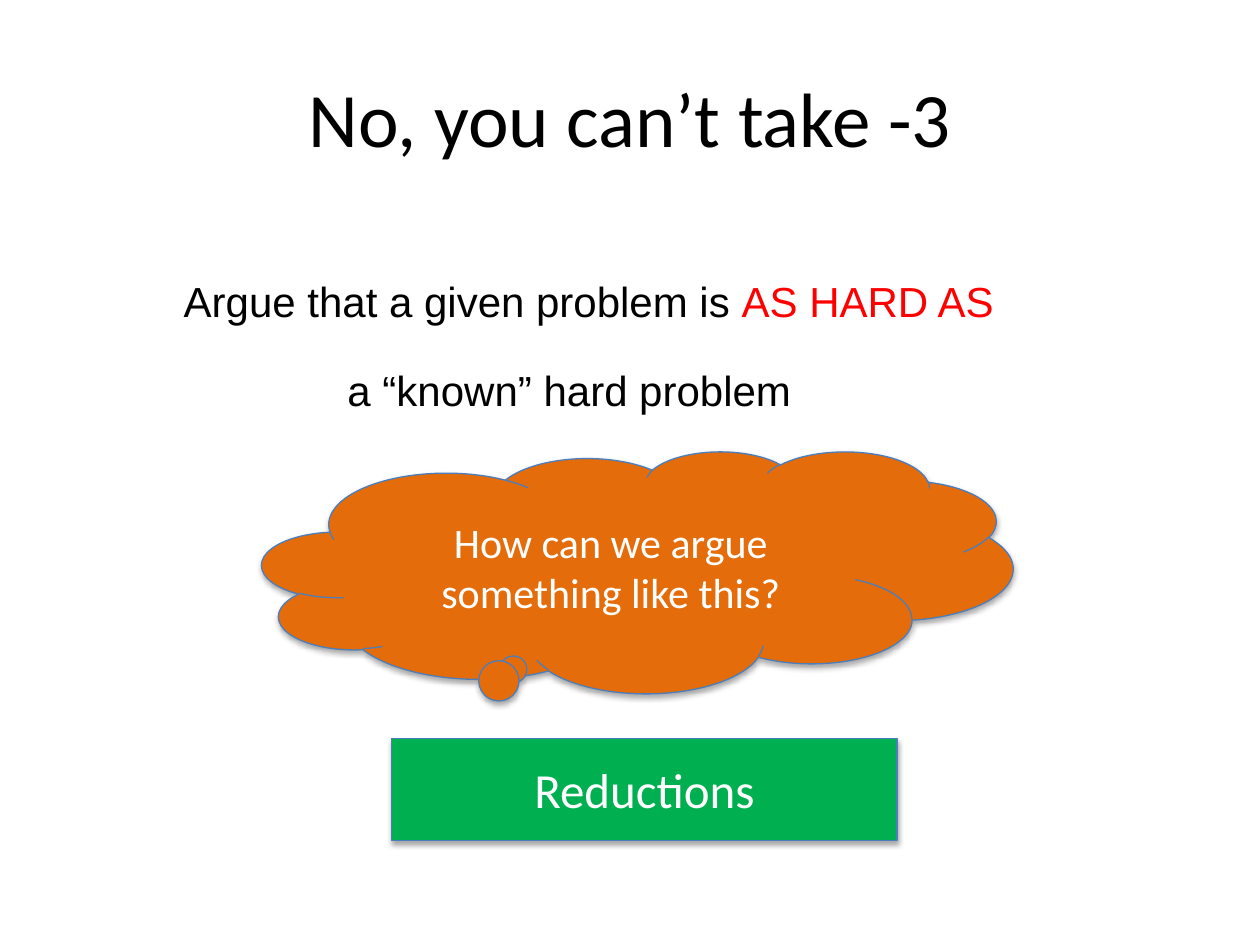
"""Build the slide that introduces reductions between hard problems."""
from dataclasses import dataclass

from pptx import Presentation
from pptx.dml.color import RGBColor
from pptx.enum.shapes import MSO_SHAPE
from pptx.enum.text import MSO_ANCHOR, MSO_AUTO_SIZE, PP_ALIGN
from pptx.util import Inches, Pt

CLOUD = MSO_SHAPE.CLOUD_CALLOUT
RECTANGLE = MSO_SHAPE.RECTANGLE
MIDDLE = MSO_ANCHOR.MIDDLE
GROW = MSO_AUTO_SIZE.SHAPE_TO_FIT_TEXT
CENTER = PP_ALIGN.CENTER
TITLE_ONLY = 5


@dataclass(frozen=True)
class Theme:
    black: RGBColor = RGBColor.from_string("000000")
    white: RGBColor = RGBColor.from_string("FFFFFF")
    emphasis: RGBColor = RGBColor.from_string("FF0000")
    question: RGBColor = RGBColor.from_string("E46C0A")
    answer: RGBColor = RGBColor.from_string("00B050")
    outline: RGBColor = RGBColor.from_string("4B7EBC")
    heading_font: str = "Calibri"
    statement_font: str = "Arial"
    title_size: int = 44
    answer_size: int = 28
    body_size: int = 24
    outline_width: float = 0.75


THEME = Theme()


def add_run(paragraph, text, font, size, color):
    run = paragraph.add_run()
    run.text = text
    run.font.name = font
    run.font.size = Pt(size)
    run.font.color.rgb = color


def set_title(slide, text):
    title = slide.shapes.title
    title.left, title.top = Inches(0.5), Inches(0.3)
    title.width, title.height = Inches(9), Inches(1.25)
    title.text_frame.vertical_anchor = MIDDLE
    paragraph = title.text_frame.paragraphs[0]
    paragraph.alignment = CENTER
    add_run(paragraph, text, THEME.heading_font, THEME.title_size, THEME.black)


def add_statement(slide, box, pieces):
    statement = slide.shapes.add_textbox(*map(Inches, box))
    frame = statement.text_frame
    frame.word_wrap = False
    frame.auto_size = GROW
    for text, color in pieces:
        add_run(frame.paragraphs[0], text, THEME.statement_font, THEME.body_size, color)


def add_callout(slide, preset, box, text, size, fill):
    callout = slide.shapes.add_shape(preset, *map(Inches, box))
    callout.fill.solid()
    callout.fill.fore_color.rgb = fill
    callout.line.color.rgb = THEME.outline
    callout.line.width = Pt(THEME.outline_width)
    callout.text_frame.word_wrap = True
    callout.text_frame.vertical_anchor = MIDDLE
    paragraph = callout.text_frame.paragraphs[0]
    paragraph.alignment = CENTER
    add_run(paragraph, text, THEME.heading_font, size, THEME.white)
    return callout


def main():
    deck = Presentation()
    deck.slide_width, deck.slide_height = Inches(10), Inches(7.5)
    slide = deck.slides.add_slide(deck.slide_layouts[TITLE_ONLY])

    set_title(slide, "No, you can’t take -3")
    add_statement(slide, (1.36, 2.14, 6.68, 0.51), [
        ("Argue that a given problem is ", THEME.black),
        ("AS HARD AS", THEME.emphasis),
    ])
    add_statement(slide, (2.66, 2.84, 3.76, 0.5), [
        ("a “known” hard problem", THEME.black),
    ])
    question = add_callout(slide, CLOUD, (2.08, 3.58, 5.96, 1.92),
                           "How can we argue something like this?",
                           THEME.body_size, THEME.question)
    question.adjustments[0] = -0.16
    question.adjustments[1] = 0.39
    add_callout(slide, RECTANGLE, (3.11, 5.86, 4.01, 0.81),
                "Reductions", THEME.answer_size, THEME.answer)

    deck.save("out.pptx")


if __name__ == "__main__":
    main()
